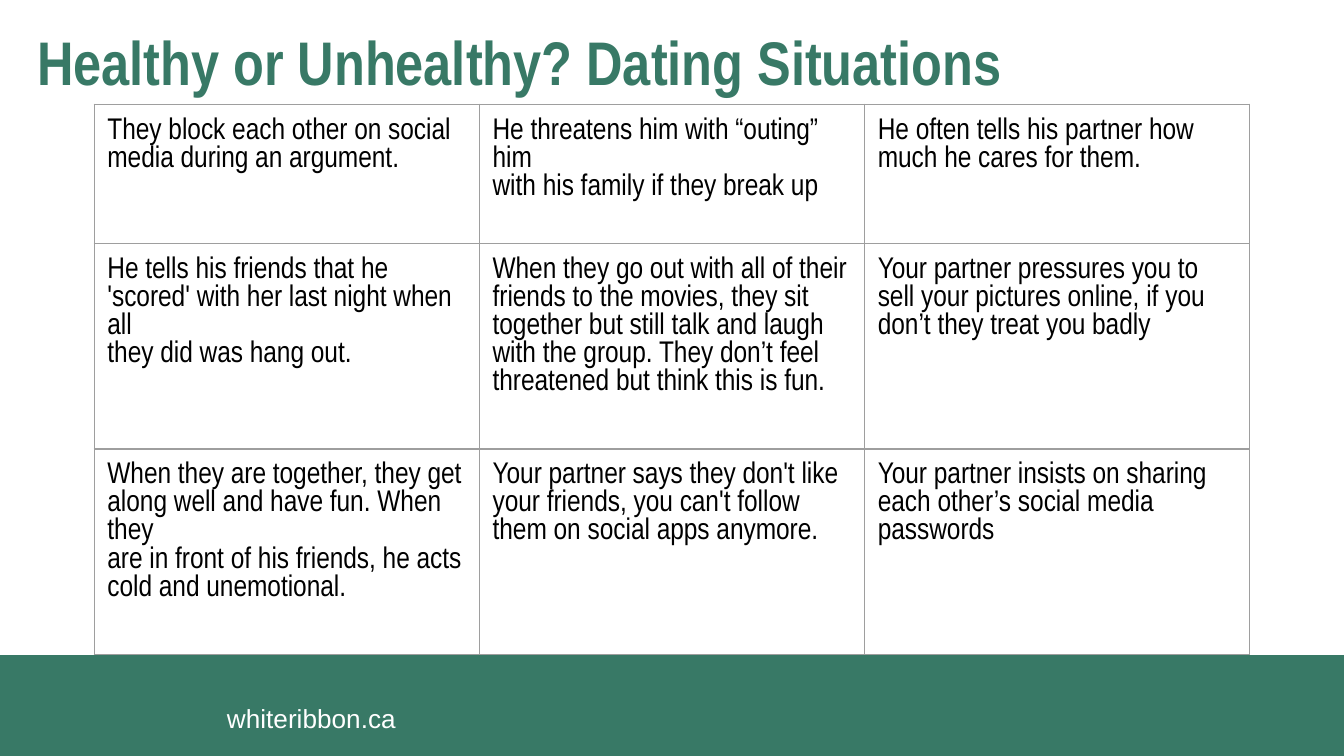
"""Build the dating situations slide with its three-by-three table."""
from lxml import etree
from pptx import Presentation
from pptx import util as u
from pptx.dml import color
from pptx.enum import shapes, text
from pptx.oxml import ns

COLORS = {"green": "387966", "white": "FFFFFF", "black": "000000", "grid": "9E9E9E"}
INSET = u.Cm(0.25)
SITUATIONS = [
    [
        ["They block each other on social media during an argument."],
        ["He threatens him with “outing” him", "with his family if they break up"],
        ["He often tells his partner how much he cares for them."],
    ],
    [
        ["He tells his friends that he", "'scored' with her last night when all", "they did was hang out."],
        [
            "When they go out with all of their",
            "friends to the movies, they sit together but still talk and laugh",
            "with the group. They don’t feel",
            "threatened but think this is fun.",
        ],
        ["Your partner pressures you to sell your pictures online, if you don’t they treat you badly"],
    ],
    [
        [
            "When they are together, they get",
            "along well and have fun. When they",
            "are in front of his friends, he acts cold and unemotional.",
        ],
        ["Your partner says they don't like your friends, you can't follow them on social apps anymore."],
        ["Your partner insists on sharing each other’s social media passwords"],
    ],
]


def write(frame, lines, size, ink, font="Arial Narrow", bold=False):
    """Fill a text frame with one formatted paragraph per line."""
    frame.word_wrap = True
    frame.margin_left = frame.margin_right = INSET
    frame.margin_top = frame.margin_bottom = INSET
    for index, line in enumerate(lines):
        para = frame.paragraphs[0] if index == 0 else frame.add_paragraph()
        para.alignment = text.PP_ALIGN.LEFT
        span = para.add_run()
        span.text = line
        span.font.name = font
        span.font.size = u.Pt(size)
        span.font.bold = bold
        span.font.color.rgb = color.RGBColor.from_string(COLORS[ink])


def draw_borders(cell):
    """Give a table cell a thin line on all four sides."""
    props = cell._tc.get_or_add_tcPr()
    for position, side in enumerate(("lnL", "lnR", "lnT", "lnB")):
        line = etree.Element(ns.qn(f"a:{side}"), w=str(u.Pt(0.75)))
        fill = etree.SubElement(line, ns.qn("a:solidFill"))
        etree.SubElement(fill, ns.qn("a:srgbClr"), val=COLORS["grid"])
        props.insert(position, line)


deck = Presentation()
deck.slide_width, deck.slide_height = u.Cm(25.4), u.Cm(14.29)
page = deck.slides.add_slide(deck.slide_layouts[5])

band = page.shapes.add_shape(shapes.MSO_SHAPE.RECTANGLE, 0, u.Cm(12.39), deck.slide_width, u.Cm(1.9))
band.shadow.inherit = False
band.fill.solid()
band.fill.fore_color.rgb = color.RGBColor.from_string(COLORS["green"])
band.line.color.rgb = color.RGBColor.from_string(COLORS["green"])
band.line.width = u.Pt(0.75)

address = page.shapes.add_textbox(u.Cm(4.04), u.Cm(13.02), u.Cm(3.92), u.Cm(0.94))
write(address.text_frame, ["whiteribbon.ca"], size=14, ink="white", font="Arial")

title = page.shapes.title
title.left, title.top, title.width, title.height = u.Cm(0.45), u.Cm(0.26), u.Cm(23.67), u.Cm(1.8)
title.text_frame.vertical_anchor = text.MSO_ANCHOR.MIDDLE
write(title.text_frame, ["Healthy or Unhealthy? Dating Situations"], size=33, ink="green", bold=True)

grid = page.shapes.add_table(3, 3, u.Cm(1.78), u.Cm(1.97), u.Cm(21.84), u.Cm(8.93)).table
grid.first_row = grid.horz_banding = False
for column in grid.columns:
    column.width = u.Cm(7.28)
for row, height, situations in zip(grid.rows, (2.63, 3.15, 3.15), SITUATIONS):
    row.height = u.Cm(height)
    for cell, lines in zip(row.cells, situations):
        write(cell.text_frame, lines, size=16, ink="black")
        cell.margin_left = cell.margin_right = INSET
        cell.margin_top = cell.margin_bottom = INSET
        cell.fill.background()
        draw_borders(cell)

deck.save("out.pptx")
